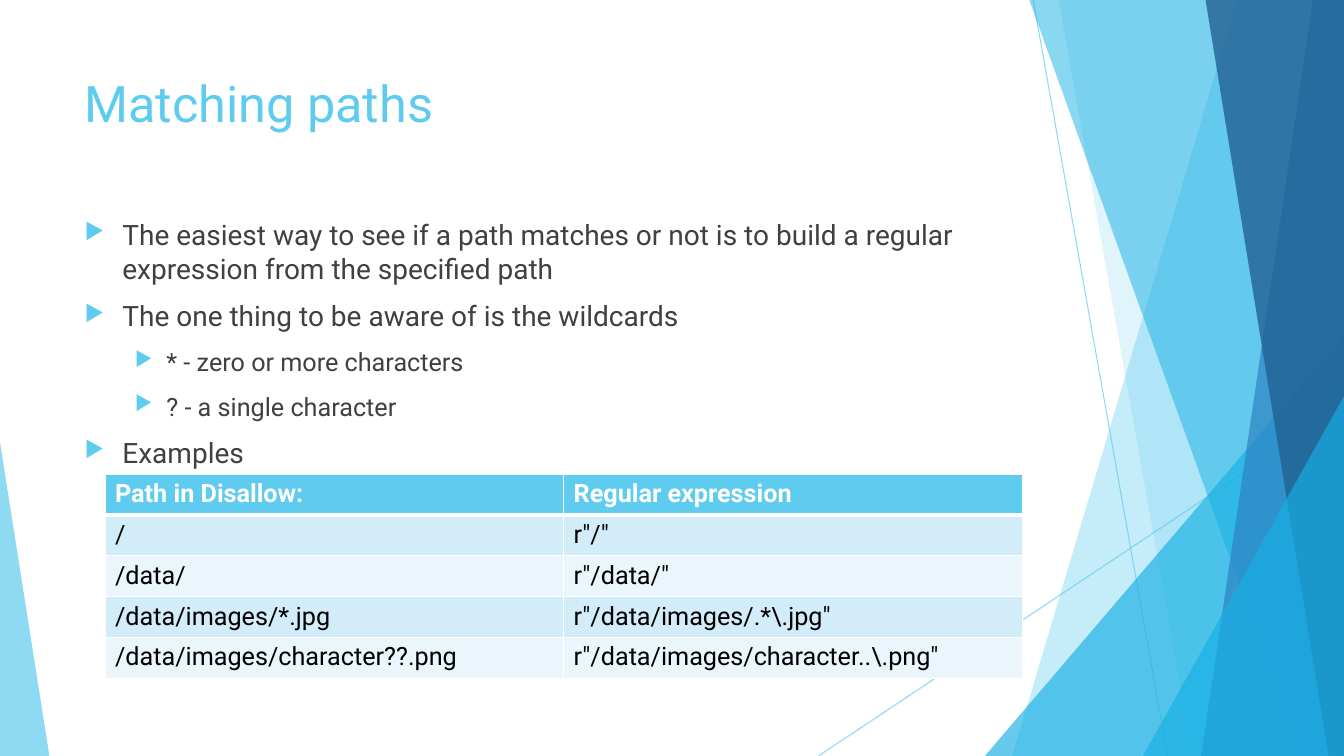
import pptx
import pptx.dml.color
import pptx.enum.shapes
import pptx.oxml
import pptx.oxml.ns
import pptx.util
from lxml import etree

Pt = pptx.util.Pt
qn = pptx.oxml.ns.qn

WIDTH, HEIGHT = 960, 540
FONT = "Roboto"
SKY, CYAN, BLUE, NAVY = "5FCBEF", "17B0E4", "2E83C3", "226292"
WHITE, BLACK, GREY = "FFFFFF", "000000", "404040"
STRIPES = ["D2ECF9", "EAF6FC"]

TITLE = "Matching paths"
BULLETS = [
    (0, "The easiest way to see if a path matches or not is to build a regular "
        "expression from the specified path"),
    (0, "The one thing to be aware of is the wildcards"),
    (1, "* - zero or more characters"),
    (1, "? - a single character"),
    (0, "Examples"),
]
# Per level: font size, left margin, hanging indent
LEVELS = [(20, 27, 27), (18, 58.5, 22.5)]
EXAMPLES = [
    ("Path in Disallow:", "Regular expression"),
    ("/", 'r"/"'),
    ("/data/", 'r"/data/"'),
    ("/data/images/*.jpg", r'r"/data/images/.*\.jpg"'),
    ("/data/images/character??.png", r'r"/data/images/character..\.png"'),
]
TABLE_LEFT, TABLE_TOP, COLUMN_WIDTH, ROW_HEIGHT = 75, 338.6, 327.6, 29.2

RAYS = [((738, 0), (834, 540)), ((960, 290), (584.6, 540))]
# Back to front. A band has its left edge at top and bottom and reaches the
# right side; a triangle has left, top, width and apex position.
FACETS = [
    ("band", (884, 723), SKY, 36),
    ("band", (756, 852), SKY, 20),
    ("triangle", (703.5, 239.8, 256.5, 1), CYAN, 66),
    ("band", (735, 929.5), CYAN, 50),
    ("band", (938, 858), BLUE, 70),
    ("band", (861, 949), NAVY, 80),
    ("triangle", (816.5, 283, 143.5, 1), CYAN, 66),
    ("triangle", (0, 316, 35.3, 0), SKY, 70),
]


def color(hex_string):
    return pptx.dml.color.RGBColor.from_string(hex_string)


def paint(fill_format, hex_string, owner=None, opacity=100):
    """Set a solid fill; owner is the element that holds it when translucent."""
    fill_format.solid()
    fill_format.fore_color.rgb = color(hex_string)
    if opacity < 100:
        tone = owner.find(qn("a:solidFill"))[0]
        etree.SubElement(tone, qn("a:alpha")).set("val", str(opacity * 1000))


def write(paragraph, text, *, size, hex_color, bold=False):
    run = paragraph.add_run()
    run.text = text
    run.font.name = FONT
    run.font.size = Pt(size)
    run.font.bold = bold
    run.font.color.rgb = color(hex_color)


def add_text_frame(slide, left, top, width, height):
    box = slide.shapes.add_textbox(Pt(left), Pt(top), Pt(width), Pt(height))
    box.text_frame.word_wrap = True
    return box.text_frame


def add_ray(slide, start, end):
    ray = slide.shapes.add_connector(
        pptx.enum.shapes.MSO_CONNECTOR.STRAIGHT, *(Pt(value) for value in start + end))
    ray.line.width = Pt(0.75)
    properties = ray._element.spPr
    paint(ray.line.fill, SKY, properties.find(qn("a:ln")), 70)
    etree.SubElement(properties, qn("a:effectLst"))


def add_facet(slide, kind, geometry, hex_color, opacity):
    if kind == "band":
        top_left, bottom_left = geometry
        top = -0.75
        builder = slide.shapes.build_freeform(Pt(top_left), Pt(top))
        corners = [(WIDTH, top), (WIDTH, HEIGHT), (bottom_left, HEIGHT)]
        builder.add_line_segments([(Pt(x), Pt(y)) for x, y in corners], close=True)
        shape = builder.convert_to_shape()
    else:
        left, top, width, apex = geometry
        shape = slide.shapes.add_shape(
            pptx.enum.shapes.MSO_SHAPE.ISOSCELES_TRIANGLE,
            Pt(left), Pt(top), Pt(width), Pt(HEIGHT - top))
        shape.adjustments[0] = apex
    shape.shadow.inherit = False
    shape.line.fill.background()
    paint(shape.fill, hex_color, shape._element.spPr, opacity)


def add_bullet(paragraph, level, text):
    size, margin, hanging = LEVELS[level]
    paragraph.level = level
    paragraph.space_before = Pt(10)
    properties = paragraph._p.get_or_add_pPr()
    properties.set("marL", str(Pt(margin)))
    properties.set("indent", str(-Pt(hanging)))
    bullet_color = etree.SubElement(properties, qn("a:buClr"))
    etree.SubElement(bullet_color, qn("a:srgbClr")).set("val", SKY)
    etree.SubElement(properties, qn("a:buSzPct")).set("val", "80000")
    etree.SubElement(properties, qn("a:buChar")).set("char", "▶")
    write(paragraph, text, size=size, hex_color=GREY)


def add_borders(cell, top, bottom):
    properties = cell._tc.get_or_add_tcPr()
    for side, width in (("L", 1), ("R", 1), ("T", top), ("B", bottom)):
        line = etree.SubElement(properties, qn("a:ln" + side), w=str(Pt(width)))
        fill = etree.SubElement(line, qn("a:solidFill"))
        etree.SubElement(fill, qn("a:srgbClr")).set("val", WHITE)


def add_examples(slide):
    rows, columns = len(EXAMPLES), len(EXAMPLES[0])
    table = slide.shapes.add_table(
        rows, columns, Pt(TABLE_LEFT), Pt(TABLE_TOP),
        Pt(COLUMN_WIDTH * columns), Pt(ROW_HEIGHT * rows)).table
    for row, texts in enumerate(EXAMPLES):
        header = row == 0
        table.rows[row].height = Pt(ROW_HEIGHT)
        for column, text in enumerate(texts):
            cell = table.cell(row, column)
            add_borders(cell, top=3 if row == 1 else 1, bottom=3 if header else 1)
            paint(cell.fill, SKY if header else STRIPES[(row - 1) % 2])
            write(cell.text_frame.paragraphs[0], text, size=18,
                  hex_color=WHITE if header else BLACK, bold=header)


def main():
    presentation = pptx.Presentation()
    presentation.slide_width, presentation.slide_height = Pt(WIDTH), Pt(HEIGHT)
    slide = presentation.slides.add_slide(presentation.slide_layouts[6])
    paint(slide.background.fill, WHITE)

    for start, end in RAYS:
        add_ray(slide, start, end)
    for facet in FACETS:
        add_facet(slide, *facet)

    title = add_text_frame(slide, 53.3, 48, 677, 104)
    write(title.paragraphs[0], TITLE, size=36, hex_color=SKY)

    body = add_text_frame(slide, 53.3, 152, 677, 324)
    for index, (level, text) in enumerate(BULLETS):
        paragraph = body.add_paragraph() if index else body.paragraphs[0]
        add_bullet(paragraph, level, text)

    add_examples(slide)
    presentation.save("out.pptx")


if __name__ == "__main__":
    main()
